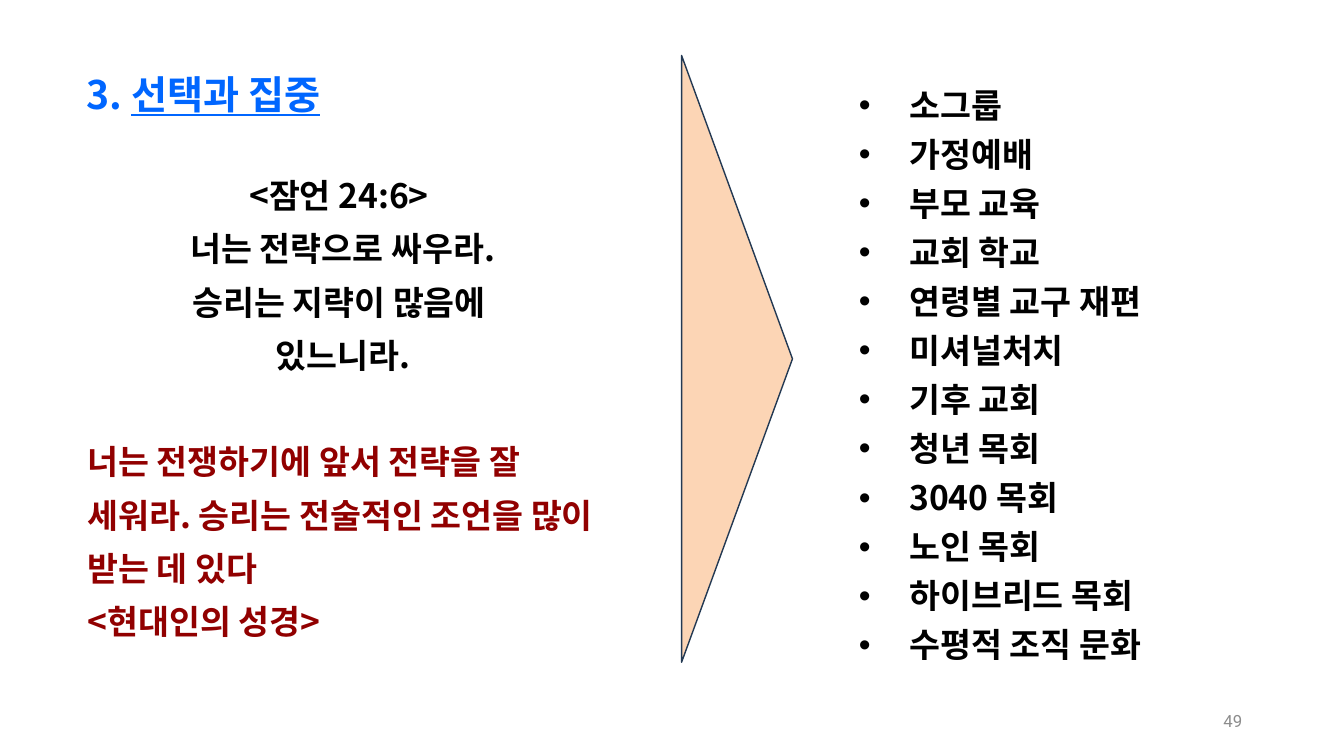
"""Build the slide on choice and focus in church ministry."""
from lxml import etree
from pptx import Presentation
from pptx.dml.color import RGBColor
from pptx.enum.shapes import MSO_SHAPE
from pptx.enum.text import MSO_ANCHOR, MSO_AUTO_SIZE, PP_ALIGN
from pptx.oxml.ns import qn
from pptx.util import Inches, Pt

TRIANGLE = MSO_SHAPE.ISOSCELES_TRIANGLE
TOP, MIDDLE, BOTTOM = MSO_ANCHOR.TOP, MSO_ANCHOR.MIDDLE, MSO_ANCHOR.BOTTOM
LEFT, CENTER, RIGHT = PP_ALIGN.LEFT, PP_ALIGN.CENTER, PP_ALIGN.RIGHT
NO_AUTOFIT = MSO_AUTO_SIZE.NONE
TITLE_ONLY = 5
KOREAN_FONT = "Noto Sans CJK KR"
BLACK, DARK_RED, BLUE = "000000", "910000", "0066FF"
VERSE_SPACING = 38

PROVERB = ["<잠언 24:6> ", "너는 전략으로 싸우라.", "승리는 지략이 많음에 ", "있느니라."]
MODERN_VERSION = [
    "너는 전쟁하기에 앞서 전략을 잘 세워라. 승리는 전술적인 조언을 많이 받는 데 있다",
    "<현대인의 성경>",
]
MINISTRIES = [
    "소그룹", "가정예배", "부모 교육", "교회 학교", "연령별 교구 재편", "미셔널처치",
    "기후 교회", "청년 목회", "3040 목회", "노인 목회", "하이브리드 목회", "수평적 조직 문화",
]


def color(value):
    """Turn a hex string into a colour."""
    return RGBColor.from_string(value)


def place(shape, left, top, width, height):
    """Position a shape, in inches."""
    shape.left, shape.top = Inches(left), Inches(top)
    shape.width, shape.height = Inches(width), Inches(height)


def prepare_frame(shape, anchor=TOP):
    """Set wrapping and anchoring, and return the text frame."""
    frame = shape.text_frame
    frame.word_wrap = True
    frame.auto_size = NO_AUTOFIT
    frame.vertical_anchor = anchor
    return frame


def add_text_box(slide, left, top, width, height, anchor=TOP):
    """Add a text box and return its text frame."""
    box = slide.shapes.add_textbox(Inches(left), Inches(top), Inches(width), Inches(height))
    return prepare_frame(box, anchor)


def add_bullet(paragraph, indent):
    """Give a paragraph a round bullet with a hanging indent in inches."""
    properties = paragraph._p.get_or_add_pPr()
    properties.set("marL", str(Inches(indent)))
    properties.set("indent", str(Inches(-indent)))
    etree.SubElement(properties, qn("a:buFont")).set("typeface", "Arial")
    etree.SubElement(properties, qn("a:buChar")).set("char", "•")


def add_run(paragraph, text, size=24, font=KOREAN_FONT, fill=BLACK, bold=True, underline=False):
    """Add formatted text to a paragraph."""
    run = paragraph.add_run()
    run.text = text
    run.font.size = Pt(size)
    run.font.bold = bold
    run.font.underline = underline
    run.font.color.rgb = color(fill)
    run.font.name = font
    etree.SubElement(run.font._element, qn("a:ea")).set("typeface", font)


def add_paragraph(frame, text, align=LEFT, spacing=None, before=0, bullet_indent=None, **run_format):
    """Write one paragraph, using the empty first one if it is free."""
    first = frame.paragraphs[0]
    paragraph = frame.add_paragraph() if first.runs else first
    paragraph.alignment = align
    paragraph.space_before = Pt(before)
    if spacing:
        paragraph.line_spacing = Pt(spacing)
    if bullet_indent:
        add_bullet(paragraph, bullet_indent)
    add_run(paragraph, text, **run_format)
    return paragraph


def add_title(slide):
    """Fill in the title placeholder."""
    title = slide.shapes.title
    place(title, 0.76, 0.59, 4.56, 0.62)
    title.line.color.rgb = color("FFFFFF")
    title.line.width = Pt(0.75)
    frame = prepare_frame(title, BOTTOM)
    paragraph = add_paragraph(frame, "3. ", spacing=40, size=28, fill=BLUE)
    add_run(paragraph, "선택과 집중", size=28, fill=BLUE, underline=True)


def add_verses(slide):
    """Add the proverb and its modern version."""
    frame = add_text_box(slide, 0.77, 1.56, 5.26, 4.85)
    for line in PROVERB:
        add_paragraph(frame, line, align=CENTER, spacing=VERSE_SPACING)
    for index, line in enumerate(MODERN_VERSION):
        gap = 0 if index else VERSE_SPACING
        add_paragraph(frame, line, spacing=VERSE_SPACING, before=gap, fill=DARK_RED)


def add_ministries(slide):
    """Add the bulleted list of ministries."""
    frame = add_text_box(slide, 8.42, 0.71, 3.71, 5.94)
    for ministry in MINISTRIES:
        add_paragraph(frame, ministry, spacing=35, bullet_indent=0.5)


def add_pointer(slide):
    """Add the triangle pointing from the verses to the list."""
    pointer = slide.shapes.add_shape(TRIANGLE, Inches(4.3), Inches(3.01), Inches(6.02), Inches(1.1))
    pointer.rotation = 90
    pointer.shadow.inherit = False
    pointer.fill.solid()
    pointer.fill.fore_color.rgb = color("FCD5B5")
    pointer.line.color.rgb = color("233953")
    pointer.line.width = Pt(1)


def add_page_number(slide):
    """Add the page number at the lower right."""
    frame = add_text_box(slide, 9.42, 6.95, 3, 0.4, MIDDLE)
    add_paragraph(frame, "49", align=RIGHT, size=12, font="Roboto", fill="8C8C8C", bold=False)


def main():
    """Build and save the presentation."""
    presentation = Presentation()
    presentation.slide_width, presentation.slide_height = Inches(13.33), Inches(7.5)
    slide = presentation.slides.add_slide(presentation.slide_layouts[TITLE_ONLY])
    add_title(slide)
    add_verses(slide)
    add_pointer(slide)
    add_ministries(slide)
    add_page_number(slide)
    presentation.save("out.pptx")


if __name__ == "__main__":
    main()
